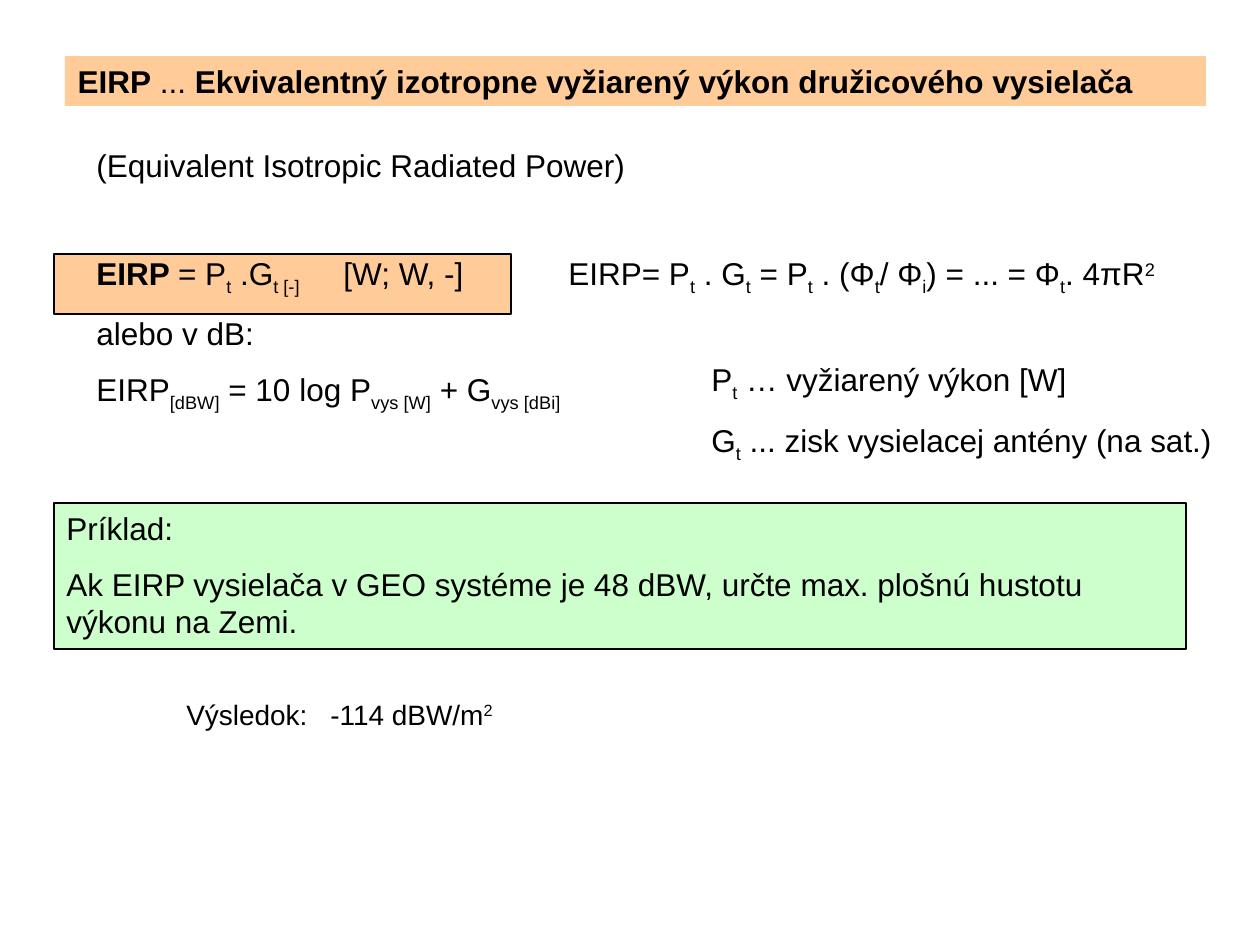
from lxml import etree
from pptx import Presentation
from pptx.dml.color import RGBColor
from pptx.enum.shapes import MSO_SHAPE
from pptx.enum.text import MSO_ANCHOR, MSO_AUTO_SIZE, PP_ALIGN
from pptx.oxml.ns import qn
from pptx.util import Pt

RECTANGLE = MSO_SHAPE.RECTANGLE
LEFT, TOP, NO_FIT = PP_ALIGN.LEFT, MSO_ANCHOR.TOP, MSO_AUTO_SIZE.NONE
TITLE_ONLY = 5
EMU_PER_PX = 914400 / 126

THEME = {
    "font": "Arial", "text": "000000", "line": "000000",
    "highlight": "FFCC99", "example": "CCFFCC",
    "size": 18, "small": 16, "gap": 10, "section_gap": 40, "line_width": 0.75,
}
BASELINES = {"sub": -25000, "sup": 30000}

# Content: each paragraph is a list of (text, style) spans
TITLE = [[("EIRP", "bold"), (" ... ", ""),
          ("Ekvivalentný izotropne vyžiarený výkon družicového vysielača", "bold")]]
INTRO = [("(Equivalent Isotropic Radiated Power)", "")]
FORMULA = [
    ("EIRP ", "bold"), ("= P", ""), ("t", "sub"), (" .G", ""), ("t [-]", "sub"),
    ("\t[W; W, -]\tEIRP= P", ""), ("t", "sub"), (" . G", ""), ("t", "sub"),
    (" = P", ""), ("t", "sub"), (" . (Φ", ""), ("t", "sub"), ("/ Φ", ""), ("i", "sub"),
    (") = ... = Φ", ""), ("t", "sub"), (". 4πR", ""), ("2", "sup"),
]
DECIBELS = [
    [("alebo v dB:", "")],
    [("EIRP", ""), ("[dBW]", "sub"), (" = 10 log P", ""), ("vys [W]", "sub"),
     (" + G", ""), ("vys [dBi]", "sub")],
]
LEGEND = [
    [("P", ""), ("t", "sub"), (" … vyžiarený výkon [W]", "")],
    [("G", ""), ("t", "sub"), (" ... zisk vysielacej antény (na sat.)", "")],
]
EXAMPLE = [
    [("Príklad:", "")],
    [("Ak EIRP vysielača v GEO systéme je 48 dBW, určte max. plošnú hustotu "
      "výkonu na Zemi.", "")],
]
RESULT = [[("Výsledok:\t-114 dBW/m", ""), ("2", "sup")]]

# Places in px: left, top, width, height
TITLE_AT = (65, 56, 1141, 50)
FORMULA_AT = (54, 254, 457, 60)
BODY_AT = (84, 140, 1155, 338)
EXAMPLE_AT = (54, 503, 1132, 146)
LEGEND_AT = (699, 354, 536, 107)
RESULT_AT = (174, 691, 764, 46)


def px(value):
    return round(value * EMU_PER_PX)


def color(name):
    return RGBColor.from_string(THEME[name])


def write(box, paragraphs, size="size", tabs=(), gaps=None):
    """Fill a box with paragraphs; gaps overrides space before by index."""
    frame = box.text_frame
    frame.word_wrap = True
    frame.auto_size = NO_FIT
    frame.vertical_anchor = TOP
    for index, spans in enumerate(paragraphs):
        para = frame.paragraphs[0] if index == 0 else frame.add_paragraph()
        para.alignment = LEFT
        gap = THEME[(gaps or {}).get(index, "gap")] if index else 0
        para.space_before = Pt(gap)
        if tabs:
            stops = etree.SubElement(para._p.get_or_add_pPr(), qn("a:tabLst"))
            for stop in tabs:
                etree.SubElement(stops, qn("a:tab"), pos=str(px(stop)), algn="l")
        for text, style in spans:
            span = para.add_run()
            span.text = text
            span.font.name = THEME["font"]
            span.font.size = Pt(THEME[size])
            span.font.bold = style == "bold"
            span.font.color.rgb = color("text")
            if style in BASELINES:
                span._r.get_or_add_rPr().set("baseline", str(BASELINES[style]))


def add_panel(slide, at, fill):
    panel = slide.shapes.add_shape(RECTANGLE, *map(px, at))
    panel.shadow.inherit = False
    panel.fill.solid()
    panel.fill.fore_color.rgb = color(fill)
    panel.line.color.rgb = color("line")
    panel.line.width = Pt(THEME["line_width"])
    return panel


def add_text(slide, at, paragraphs, **options):
    write(slide.shapes.add_textbox(*map(px, at)), paragraphs, **options)


def main():
    deck = Presentation()
    deck.slide_width, deck.slide_height = px(1260), px(945)
    page = deck.slides.add_slide(deck.slide_layouts[TITLE_ONLY])

    # Title band
    title = page.shapes.title
    title.left, title.top, title.width, title.height = map(px, TITLE_AT)
    title.fill.solid()
    title.fill.fore_color.rgb = color("highlight")
    write(title, TITLE)

    # Definition and formulas
    add_panel(page, FORMULA_AT, "highlight")
    add_text(page, BODY_AT, [INTRO, FORMULA, *DECIBELS],
             tabs=(247, 472), gaps={1: "section_gap"})
    add_text(page, LEGEND_AT, LEGEND)

    # Worked example and its result
    write(add_panel(page, EXAMPLE_AT, "example"), EXAMPLE)
    add_text(page, RESULT_AT, RESULT, size="small", tabs=(144,))

    deck.save("out.pptx")


if __name__ == "__main__":
    main()
